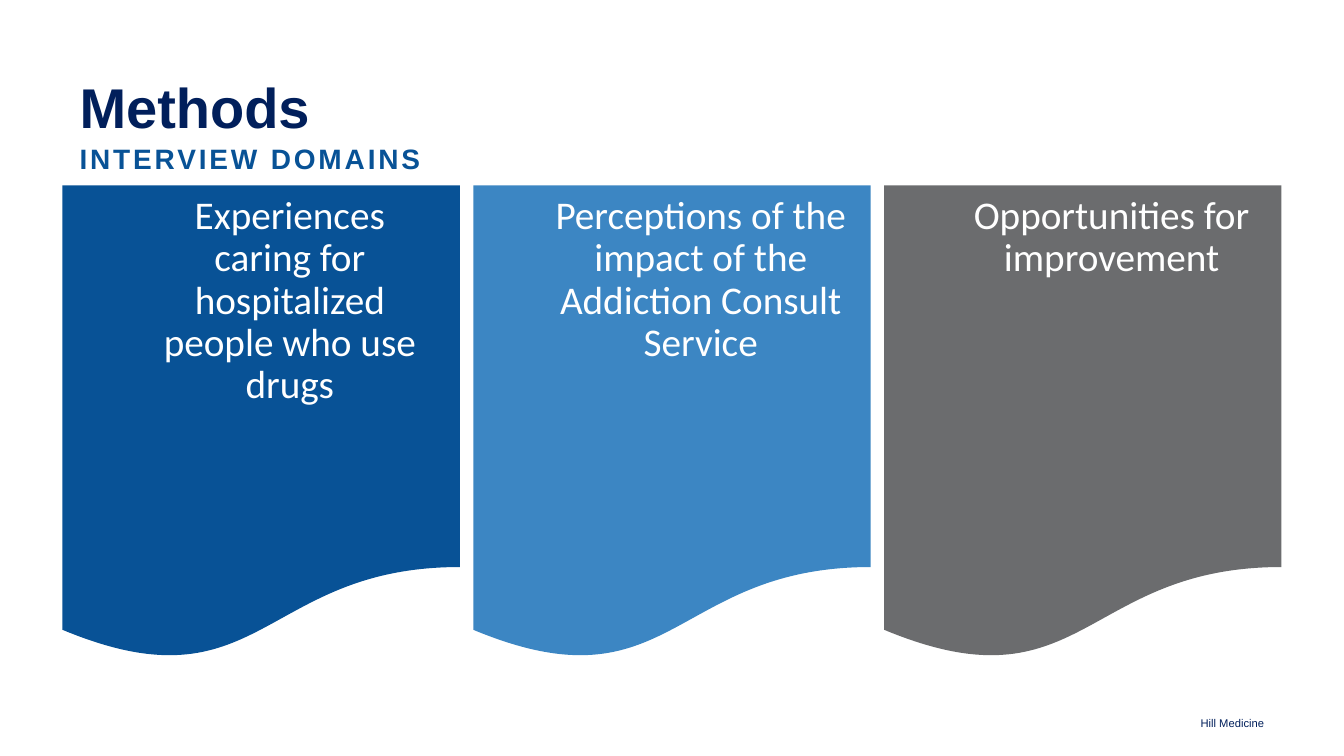
from pptx import Presentation
from pptx.dml.color import RGBColor
from pptx.enum.shapes import MSO_SHAPE
from pptx.enum.text import MSO_ANCHOR, PP_ALIGN
from pptx.util import Inches, Pt

COLORS = {
    "navy": "011F5B",
    "blue": "085296",
    "sky": "3C86C3",
    "gray": "6B6C6E",
    "white": "FFFFFF",
}

DOMAINS = [
    ("Experiences caring for hospitalized people who use drugs", "blue"),
    ("Perceptions of the impact of the Addiction Consult Service", "sky"),
    ("Opportunities for improvement", "gray"),
]

BANNER_LEFT, BANNER_TOP = 0.62, 1.84
BANNER_WIDTH, BANNER_HEIGHT = 3.94, 4.72
BANNER_STEP = 4.075
TEXT_OFFSET, TEXT_WIDTH = 0.79, 2.93


def write_text(frame, text, size, color, font="Arial", bold=False, align=PP_ALIGN.LEFT,
               line_spacing=1.0, before=0, after=0, tracking=0):
    paragraph = frame.paragraphs[0]
    paragraph.alignment = align
    paragraph.line_spacing = line_spacing
    paragraph.space_before = Pt(before)
    paragraph.space_after = Pt(after)
    run = paragraph.add_run()
    run.text = text
    run.font.name = font
    run.font.size = Pt(size)
    run.font.bold = bold
    run.font.color.rgb = RGBColor.from_string(COLORS[color])
    if tracking:
        run.font._element.set("spc", str(tracking * 100))


class SlideBuilder:
    def __init__(self, slide):
        self.slide = slide

    def text(self, text, left, top, width, height, anchor=MSO_ANCHOR.TOP, inset_top=0, **style):
        shape = self.slide.shapes.add_textbox(
            Inches(left), Inches(top), Inches(width), Inches(height))
        frame = shape.text_frame
        frame.word_wrap = True
        frame.vertical_anchor = anchor
        frame.margin_left = frame.margin_right = frame.margin_bottom = 0
        frame.margin_top = Inches(inset_top)
        write_text(frame, text, **style)

    def banner(self, left, color):
        shape = self.slide.shapes.add_shape(
            MSO_SHAPE.FLOWCHART_DOCUMENT, Inches(left), Inches(BANNER_TOP),
            Inches(BANNER_WIDTH), Inches(BANNER_HEIGHT))
        shape.shadow.inherit = False
        shape.fill.solid()
        shape.fill.fore_color.rgb = RGBColor.from_string(COLORS[color])
        shape.line.fill.background()

    def domain(self, index, text, color):
        left = BANNER_LEFT + index * BANNER_STEP
        self.banner(left, color)
        self.text(text, left + TEXT_OFFSET, BANNER_TOP, TEXT_WIDTH, BANNER_HEIGHT,
                  inset_top=0.1, size=28, color="white", font="Calibri",
                  align=PP_ALIGN.CENTER, line_spacing=0.9)


def main():
    presentation = Presentation()
    presentation.slide_width = Inches(13.33)
    presentation.slide_height = Inches(7.5)
    builder = SlideBuilder(presentation.slides.add_slide(presentation.slide_layouts[6]))

    builder.text("Hill Medicine", 9.9, 7.04, 2.64, 0.2, anchor=MSO_ANCHOR.BOTTOM,
                 size=8, color="navy", align=PP_ALIGN.RIGHT)
    builder.text("Methods", 0.79, 0.79, 11.76, 0.61,
                 size=40, color="navy", bold=True, line_spacing=0.9)
    builder.text("INTERVIEW DOMAINS", 0.79, 1.4, 11.76, 0.38,
                 size=20, color="blue", bold=True, before=12, after=3, tracking=2)
    for index, (text, color) in enumerate(DOMAINS):
        builder.domain(index, text, color)

    presentation.save("out.pptx")


if __name__ == "__main__":
    main()
